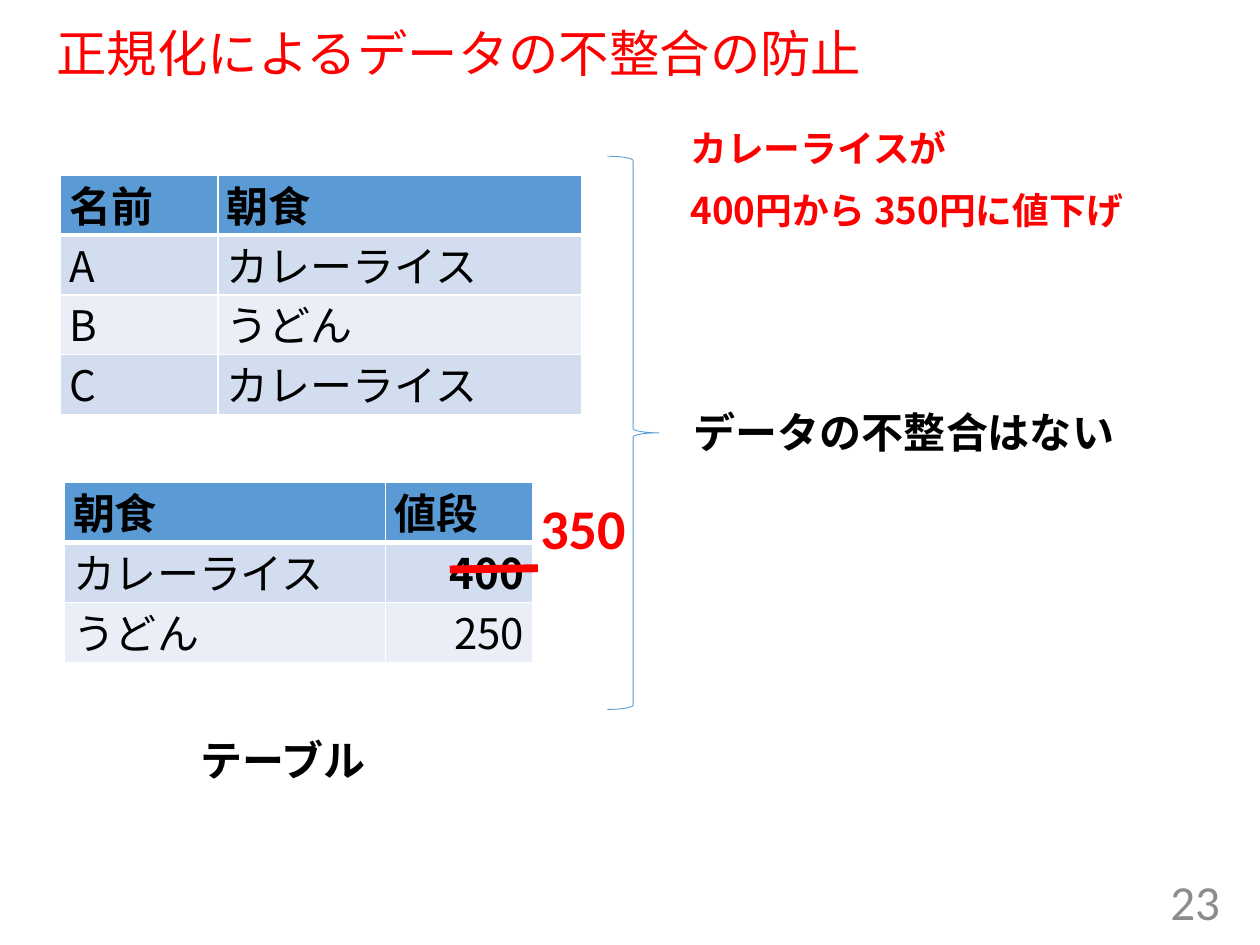
import pptx
import pptx.util
import pptx.dml.color
import pptx.enum.shapes
import pptx.enum.text
import pptx.oxml
import pptx.oxml.ns
import lxml.etree

Inches = pptx.util.Inches
Pt = pptx.util.Pt
RGB = pptx.dml.color.RGBColor.from_string
ALIGN = pptx.enum.text.PP_ALIGN
ANCHOR = pptx.enum.text.MSO_ANCHOR
qn = pptx.oxml.ns.qn

THEME = {
    "red": "FF0000", "black": "000000", "gray": "8C8C8C", "white": "FFFFFF",
    "blue": "5B9BD5", "bands": ["D2DEEF", "EAEFF7"],
    "japanese": "Noto Sans CJK JP", "latin": "Calibri", "heading": "Arial",
    "title": 28.8, "body": 24, "note": 21, "number": 28, "price": 32,
    "cell_line": 31,
}


def write_text(paragraph, text, size, color, font, bold=False, align=ALIGN.LEFT):
    paragraph.alignment = align
    run = paragraph.add_run()
    run.text = text
    formats = {"size": Pt(THEME[size]), "name": THEME[font], "bold": bold}
    for name, value in formats.items():
        setattr(run.font, name, value)
    run.font.color.rgb = RGB(THEME[color])
    east_asian = lxml.etree.SubElement(run.font._element, qn("a:ea"))
    east_asian.set("typeface", THEME["japanese"])


def set_borders(cell, bottom_width):
    properties = cell._tc.get_or_add_tcPr()
    widths = {"lnL": 1, "lnR": 1, "lnT": 1, "lnB": bottom_width}
    for index, (side, width) in enumerate(widths.items()):
        border = lxml.etree.Element(qn("a:" + side), w=str(Pt(width)))
        fill = lxml.etree.SubElement(border, qn("a:solidFill"))
        lxml.etree.SubElement(fill, qn("a:srgbClr"), val=THEME["white"])
        properties.insert(index, border)


presentation = pptx.Presentation()
presentation.slide_width = Inches(10)
presentation.slide_height = Inches(7.5)
slide = presentation.slides.add_slide(presentation.slide_layouts[6])

# Brace joining the two tables
brace = slide.shapes.add_shape(
    pptx.enum.shapes.MSO_SHAPE.RIGHT_BRACE,
    Inches(4.82), Inches(1.24), Inches(0.41), Inches(4.39))
brace.shadow.inherit = False
brace.fill.background()
brace.line.color.rgb = RGB(THEME["blue"])
brace.line.width = Pt(0.5)

# Tables: place, column widths, rows; the rows share the height equally
tables = [
    ((0.51, 3.83, 3.72, 1.43), [2.55, 1.17],
     [["朝食", "値段"], ["カレーライス", "400"], ["うどん", "250"]]),
    ((0.48, 1.39, 4.14, 1.9), [1.25, 2.89],
     [["名前", "朝食"], ["A", "カレーライス"], ["B", "うどん"], ["C", "カレーライス"]]),
]
for place, widths, rows in tables:
    table = slide.shapes.add_table(
        len(rows), len(widths), *[Inches(length) for length in place]).table
    for column, width in zip(table.columns, widths):
        column.width = Inches(width)
    for row_index, row in enumerate(rows):
        header = row_index == 0
        for column_index, text in enumerate(row):
            cell = table.cell(row_index, column_index)
            margins = {"margin_left": 0.07, "margin_right": 0.07,
                       "margin_top": 0.04, "margin_bottom": 0}
            for name, value in margins.items():
                setattr(cell, name, Inches(value))
            cell.fill.solid()
            cell.fill.fore_color.rgb = RGB(
                THEME["blue"] if header else THEME["bands"][(row_index - 1) % 2])
            set_borders(cell, 3 if header else 1)
            paragraph = cell.text_frame.paragraphs[0]
            # A fixed line height keeps the rows from growing
            paragraph.line_spacing = Pt(THEME["cell_line"])
            write_text(paragraph, text, "body", "black", "japanese",
                       bold=header or text == "400",
                       align=ALIGN.RIGHT if text.isdigit() else ALIGN.LEFT)

# Strike through the old price
strike = slide.shapes.add_connector(
    pptx.enum.shapes.MSO_CONNECTOR.STRAIGHT,
    Inches(3.57), Inches(4.52), Inches(4.27), Inches(4.51))
strike.line.color.rgb = RGB(THEME["red"])
strike.line.width = Pt(4.5)
lxml.etree.SubElement(strike._element.spPr, qn("a:effectLst"))

# Texts: place, lines, text style, frame format, paragraph format
single_line = {"word_wrap": False}
middle = {"word_wrap": True, "vertical_anchor": ANCHOR.MIDDLE}
note_frame = {"word_wrap": True, "margin_left": Inches(0.07), "margin_right": Inches(0.07),
              "margin_top": Inches(0.04), "margin_bottom": Inches(0.04)}
texts = [
    ((0.35, 0.19, 9.25, 0.51), ["正規化によるデータの不整合の防止"],
     ("title", "red", "heading"), middle, {"line_spacing": 0.9}),
    ((5.41, 0.96, 4.59, 2.33), ["カレーライスが", "400円から 350円に値下げ"],
     ("note", "red", "japanese", True), note_frame, {"space_before": Pt(10)}),
    ((5.41, 3.18, 3.57, 0.5), ["データの不整合はない"],
     ("body", "black", "japanese", True), single_line, {}),
    ((4.19, 3.87, 0.89, 0.64), ["350"],
     ("price", "red", "latin", True), single_line, {}),
    ((1.49, 5.78, 1.55, 0.5), ["テーブル"],
     ("body", "black", "latin", True), single_line, {}),
    ((7.53, 6.95, 2.25, 0.4), ["23"],
     ("number", "gray", "latin", False, ALIGN.RIGHT), middle, {}),
]
for place, lines, style, frame_format, paragraph_format in texts:
    box = slide.shapes.add_textbox(*[Inches(length) for length in place])
    for name, value in frame_format.items():
        setattr(box.text_frame, name, value)
    for index, line in enumerate(lines):
        paragraph = box.text_frame.add_paragraph() if index else box.text_frame.paragraphs[0]
        for name, value in paragraph_format.items():
            setattr(paragraph, name, value)
        write_text(paragraph, line, *style)

presentation.save("out.pptx")
